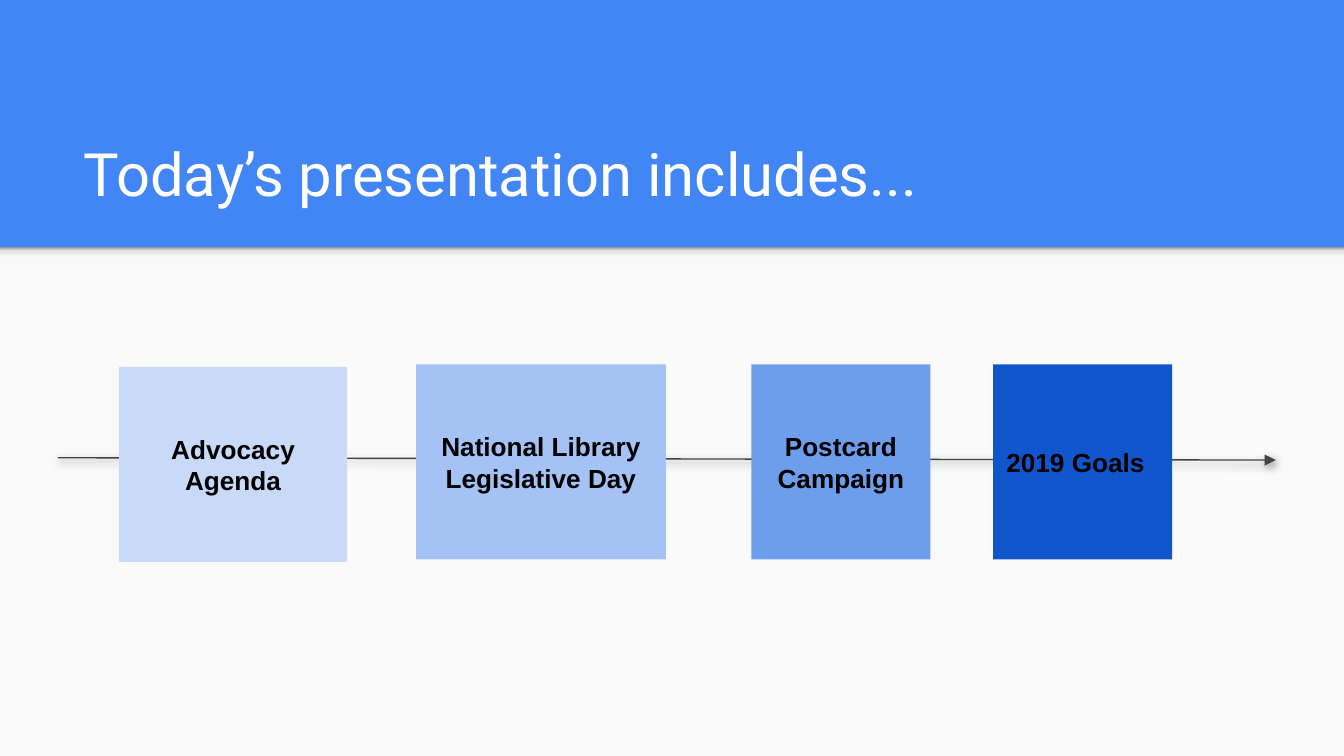
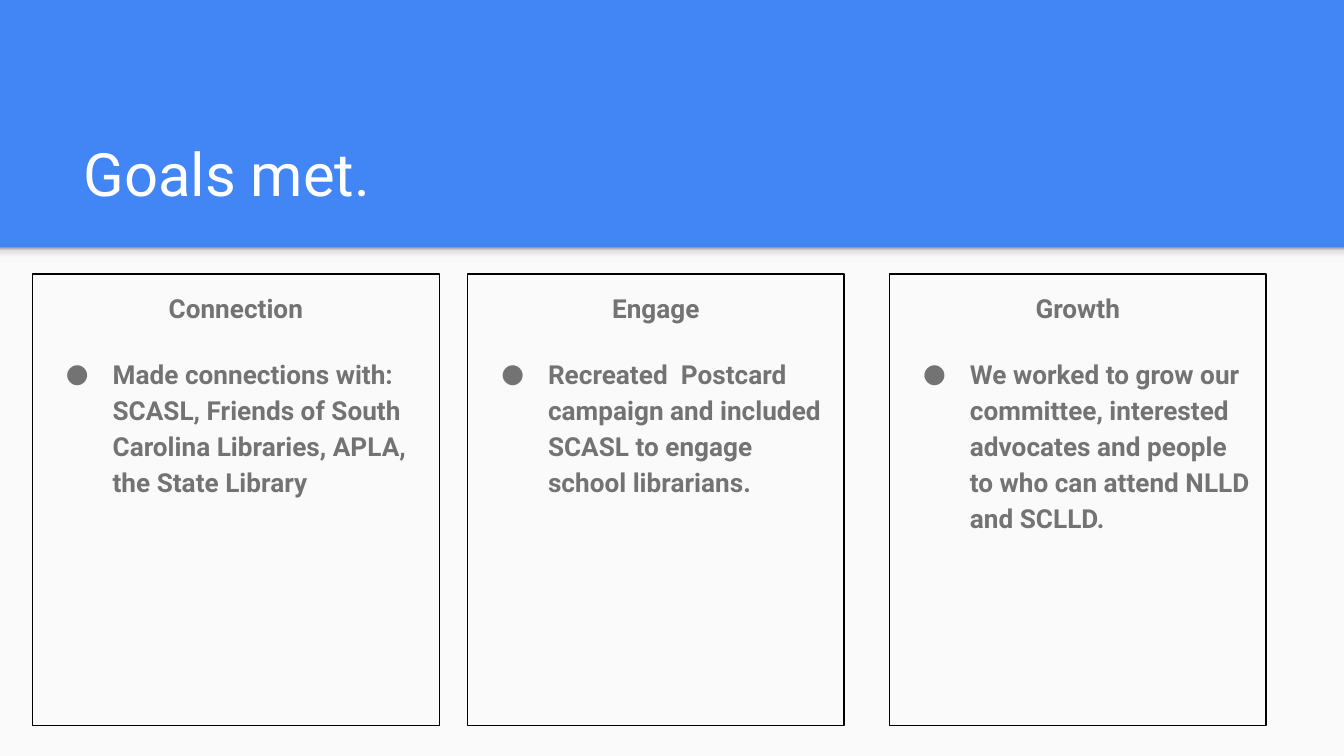
from typing import NamedTuple, Optional

from lxml import etree
from pptx import Presentation
from pptx.dml.color import RGBColor
from pptx.enum import shapes, text
from pptx.oxml import ns
from pptx.util import Pt

WIDTH, HEIGHT = 720, 405
BAND_BOTTOM = 132.5
BLUE, PAPER, WHITE, BLACK = "4285F4", "FAFAFA", "FFFFFF", "000000"
GREY, ARROW_GREY = "737373", "424242"
SHADE_STOPS = ((0, "F9F9F9"), (36, "F9F9F9"), (80, "DEDEDE"), (100, "999999"))
LEFT, CENTER = text.PP_ALIGN.LEFT, text.PP_ALIGN.CENTER


class Step(NamedTuple):
    label: str
    left: float
    top: float
    width: float
    fill: str
    align: text.PP_ALIGN = CENTER


class Goal(NamedTuple):
    heading: str
    detail: str
    left: float
    width: float


STEPS = (
    Step("Advocacy Agenda", 63.75, 196.5, 122.25, "C9DAF8"),
    Step("National Library Legislative Day", 223, 195.25, 133.75, "A4C2F4"),
    Step("Postcard Campaign", 402.5, 195.25, 96, "6D9EEB"),
    Step("2019 Goals", 532, 195.25, 96, "1155CC", LEFT),
)
GOALS = (
    Goal("Connection", "Made connections with: SCASL, Friends of South Carolina "
         "Libraries, APLA, the State Library", 17.25, 218.25),
    Goal("Engage", "Recreated  Postcard campaign and included SCASL to engage "
         "school librarians.", 250.5, 201.75),
    Goal("Growth", "We worked to grow our committee, interested advocates and "
         "people to who can attend NLLD and SCLLD.", 476.5, 201.75),
)


def color(value: str) -> RGBColor:
    return RGBColor.from_string(value)


def add_xml(parent, tag: str, **attributes):
    """Append a drawing element and return it."""
    child = etree.SubElement(parent, ns.qn(f"a:{tag}"))
    for name, value in attributes.items():
        child.set(name, str(value))
    return child


def add_box(page, left: float, top: float, width: float, height: float,
            fill: Optional[str] = None, line: Optional[str] = None):
    box = page.shapes.add_shape(shapes.MSO_SHAPE.RECTANGLE,
                                Pt(left), Pt(top), Pt(width), Pt(height))
    box.shadow.inherit = False
    if fill:
        box.fill.solid()
        box.fill.fore_color.rgb = color(fill)
    else:
        box.fill.background()
    if line:
        box.line.color.rgb = color(line)
        box.line.width = Pt(0.75)
    else:
        box.line.fill.background()
    return box


def set_frame(box, anchor: text.MSO_ANCHOR):
    frame = box.text_frame
    frame.word_wrap = True
    frame.auto_size = text.MSO_AUTO_SIZE.NONE
    frame.vertical_anchor = anchor
    frame.margin_left = frame.margin_right = Pt(7.2)
    frame.margin_top = frame.margin_bottom = Pt(7.2)
    return frame


def write(para, content: str, font: str, size: float, ink: str,
          align: text.PP_ALIGN, bold: bool = False) -> None:
    para.text = content
    para.alignment = align
    para.font.name = font
    para.font.size = Pt(size)
    para.font.bold = bold
    para.font.color.rgb = color(ink)


def add_bullet(para) -> None:
    props = para._p.get_or_add_pPr()
    props.set("marL", str(Pt(36)))
    props.set("indent", str(-Pt(25)))
    add_xml(add_xml(props, "buClr"), "srgbClr", val=GREY)
    add_xml(props, "buFont", typeface="Roboto")
    add_xml(props, "buChar", char="●")


def add_page(deck, title: str):
    """Add a page with the blue title band and the shaded edge below it."""
    page = deck.slides.add_slide(deck.slide_layouts[5])
    page.background.fill.solid()
    page.background.fill.fore_color.rgb = color(BLUE)
    add_box(page, 0, BAND_BOTTOM, WIDTH, HEIGHT - BAND_BOTTOM, PAPER)

    # Shaded edge, darkest at the top
    edge = add_box(page, 0, BAND_BOTTOM, WIDTH, 8.5)
    edge.fill.gradient()
    gradient = edge._element.spPr.find(ns.qn("a:gradFill"))
    for child in list(gradient):
        gradient.remove(child)
    stops = add_xml(gradient, "gsLst")
    for percent, shade in SHADE_STOPS:
        add_xml(add_xml(stops, "gs", pos=percent * 1000), "srgbClr", val=shade)
    add_xml(gradient, "lin", ang=270 * 60000, scaled=0)

    # Title
    heading = page.shapes.title
    heading.left, heading.top = Pt(37.5), Pt(58.25)
    heading.width, heading.height = Pt(647), Pt(60.5)
    frame = set_frame(heading, text.MSO_ANCHOR.BOTTOM)
    write(frame.paragraphs[0], title, "Roboto", 32, WHITE, LEFT)
    return page


def add_arrow(page) -> None:
    arrow = page.shapes.add_connector(shapes.MSO_CONNECTOR.STRAIGHT,
                                      Pt(31), Pt(245.25), Pt(683.5), Pt(246.5))
    arrow.line.color.rgb = color(ARROW_GREY)
    arrow.line.width = Pt(0.75)
    add_xml(arrow.line._get_or_add_ln(), "tailEnd", type="triangle")
    effects = add_xml(arrow._element.spPr, "effectLst")
    shadow = add_xml(effects, "outerShdw", blurRad=Pt(4.5), dist=Pt(1.5),
                     dir=90 * 60000, algn="bl", rotWithShape=0)
    add_xml(add_xml(shadow, "srgbClr", val=BLACK), "alpha", val=50000)


def add_step(page, step: Step) -> None:
    box = add_box(page, step.left, step.top, step.width, 104.5, step.fill)
    frame = set_frame(box, text.MSO_ANCHOR.MIDDLE)
    write(frame.paragraphs[0], step.label, "Arial", 14, BLACK, step.align, True)


def add_goal(page, goal: Goal) -> None:
    box = add_box(page, goal.left, 146.75, goal.width, 242, line=BLACK)
    frame = set_frame(box, text.MSO_ANCHOR.TOP)
    heading, detail = frame.paragraphs[0], frame.add_paragraph()
    add_bullet(detail)
    detail.space_before = Pt(16)
    write(heading, goal.heading, "Roboto", 14, GREY, CENTER, True)
    write(detail, goal.detail, "Roboto", 14, GREY, LEFT, True)
    heading.line_spacing = detail.line_spacing = 1.15


def main() -> None:
    deck = Presentation()
    deck.slide_width, deck.slide_height = Pt(WIDTH), Pt(HEIGHT)

    # Agenda timeline
    agenda = add_page(deck, "Today’s presentation includes...")
    add_arrow(agenda)
    for step in STEPS:
        add_step(agenda, step)

    # Goals in three columns
    goals = add_page(deck, "Goals met.")
    for goal in GOALS:
        add_goal(goals, goal)

    deck.save("out.pptx")


if __name__ == "__main__":
    main()
